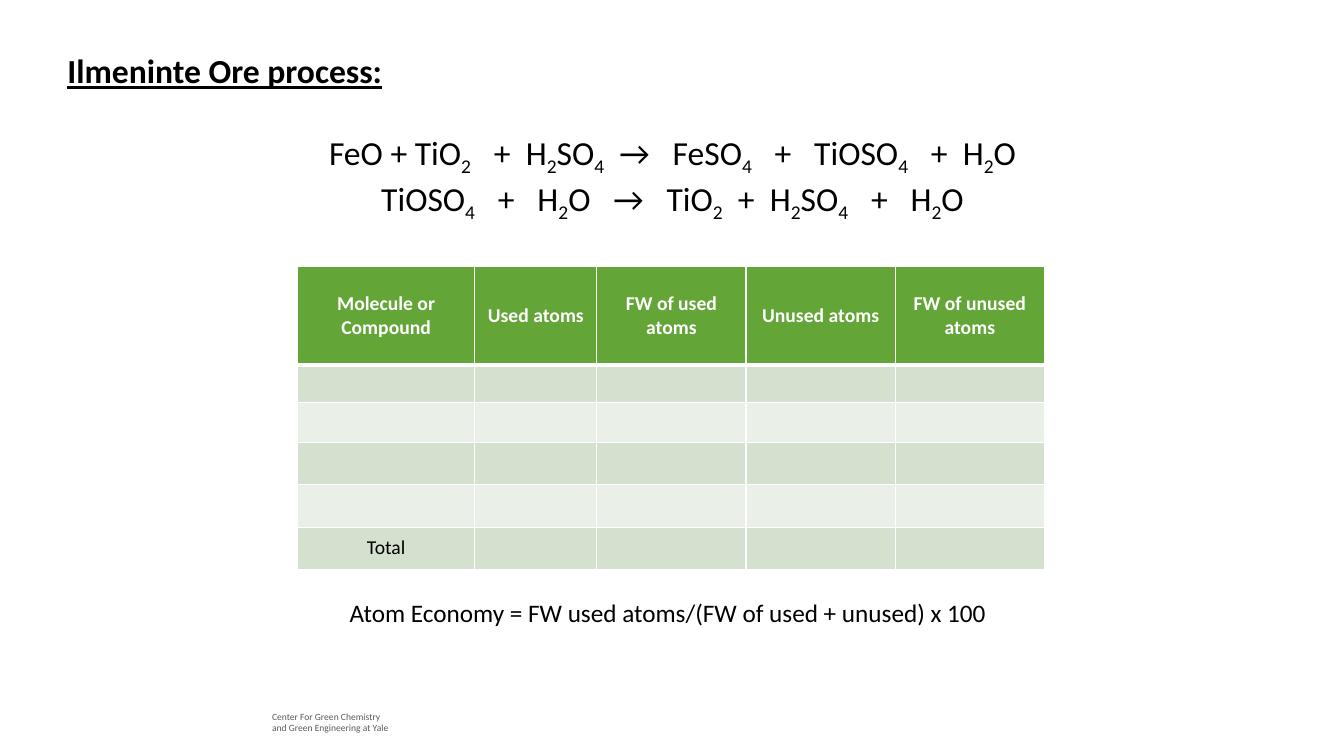
from dataclasses import dataclass

from lxml.etree import SubElement
from pptx import Presentation
from pptx.dml.color import RGBColor
from pptx.enum.text import MSO_ANCHOR, MSO_AUTO_SIZE, PP_ALIGN
from pptx.oxml.ns import qn
from pptx.util import Inches, Pt

FONT = "Calibri"
COLORS = {
    "ink": "000000",
    "footer": "595959",
    "white": "FFFFFF",
    "header": "63A537",
    "band_dark": "D3E1CE",
    "band_light": "EAF0E8",
}
HEADINGS = ["Molecule or Compound", "Used atoms", "FW of used atoms",
            "Unused atoms", "FW of unused atoms"]
COLUMN_WIDTHS = [1.76, 1.21, 1.48, 1.48, 1.48]
ROW_HEIGHTS = [0.98, 0.37, 0.4, 0.42, 0.42, 0.42]
TOTAL_ROW = len(ROW_HEIGHTS) - 1


@dataclass
class Line:
    text: str
    size: float
    color: str = "ink"
    bold: bool = False
    underline: bool = False
    align: PP_ALIGN = PP_ALIGN.LEFT
    space_before: float = 0


@dataclass
class TextBlock:
    left: float
    top: float
    width: float
    height: float
    lines: list[Line]
    wrap: bool = True


BLOCKS = [
    TextBlock(2.6, 7, 1.86, 0.33, [
        Line("Center For Green Chemistry", 6.8, "footer"),
        Line("and Green Engineering at Yale", 6.8, "footer"),
    ]),
    TextBlock(3.37, 5.88, 6.65, 0.4, [
        Line("Atom Economy = FW used atoms/(FW of used + unused) x 100", 18),
    ], wrap=False),
    TextBlock(0.57, 0.45, 12.2, 1.72, [
        Line("Ilmeninte Ore process:", 24, bold=True, underline=True),
        Line("FeO + TiO_2   +  H_2SO_4  →   FeSO_4   +   TiOSO_4   +  H_2O", 24,
             align=PP_ALIGN.CENTER, space_before=29.3),
        Line("TiOSO_4   +   H_2O   →   TiO_2  +  H_2SO_4   +   H_2O", 24,
             align=PP_ALIGN.CENTER),
    ]),
]


def rgb(name: str) -> RGBColor:
    return RGBColor.from_string(COLORS[name])


def add_run(paragraph, text: str, line: Line, subscript: bool = False) -> None:
    run = paragraph.add_run()
    run.text = text
    font = run.font
    font.name, font.size = FONT, Pt(line.size)
    font.bold, font.underline = line.bold, line.underline
    font.color.rgb = rgb(line.color)
    if subscript:
        run._r.get_or_add_rPr().set("baseline", "-25000")


def write_line(paragraph, line: Line) -> None:
    paragraph.alignment = line.align
    if line.space_before:
        paragraph.space_before = Pt(line.space_before)
    start, *formula_parts = line.text.split("_")
    add_run(paragraph, start, line)
    for part in formula_parts:
        add_run(paragraph, part[0], line, subscript=True)
        if part[1:]:
            add_run(paragraph, part[1:], line)


def add_text_block(slide, block: TextBlock) -> None:
    box = slide.shapes.add_textbox(Inches(block.left), Inches(block.top),
                                   Inches(block.width), Inches(block.height))
    frame = box.text_frame
    frame.word_wrap = block.wrap
    frame.auto_size = MSO_AUTO_SIZE.SHAPE_TO_FIT_TEXT
    for index, line in enumerate(block.lines):
        paragraph = frame.add_paragraph() if index else frame.paragraphs[0]
        write_line(paragraph, line)


def style_cell(cell, row: int) -> None:
    properties = cell._tc.get_or_add_tcPr()
    for side in ("lnL", "lnR", "lnT", "lnB"):
        heavy = (row, side) in ((0, "lnB"), (1, "lnT"))
        border = SubElement(properties, qn(f"a:{side}"), w=str(Pt(3 if heavy else 1)))
        fill = SubElement(border, qn("a:solidFill"))
        SubElement(fill, qn("a:srgbClr"), val=COLORS["white"])
    band = "band_dark" if row % 2 else "band_light"
    cell.fill.solid()
    cell.fill.fore_color.rgb = rgb(band if row else "header")
    cell.vertical_anchor = MSO_ANCHOR.MIDDLE
    cell.text_frame.paragraphs[0].font.size = Pt(14)


def add_atom_table(slide) -> None:
    table = slide.shapes.add_table(
        len(ROW_HEIGHTS), len(COLUMN_WIDTHS), Inches(2.95), Inches(2.64),
        Inches(sum(COLUMN_WIDTHS)), Inches(sum(ROW_HEIGHTS))).table
    for column, width in zip(table.columns, COLUMN_WIDTHS):
        column.width = Inches(width)
    for index, (row, height) in enumerate(zip(table.rows, ROW_HEIGHTS)):
        row.height = Inches(height)
        for cell in row.cells:
            style_cell(cell, index)
    for column, heading in enumerate(HEADINGS):
        write_line(table.cell(0, column).text_frame.paragraphs[0],
                   Line(heading, 14, "white", bold=True, align=PP_ALIGN.CENTER))
    write_line(table.cell(TOTAL_ROW, 0).text_frame.paragraphs[0],
               Line("Total", 14, align=PP_ALIGN.CENTER))


def main() -> None:
    deck = Presentation()
    deck.slide_width, deck.slide_height = Inches(13.33), Inches(7.5)
    slide = deck.slides.add_slide(deck.slide_layouts[6])
    add_atom_table(slide)
    for block in BLOCKS:
        add_text_block(slide, block)
    deck.save("out.pptx")


if __name__ == "__main__":
    main()
